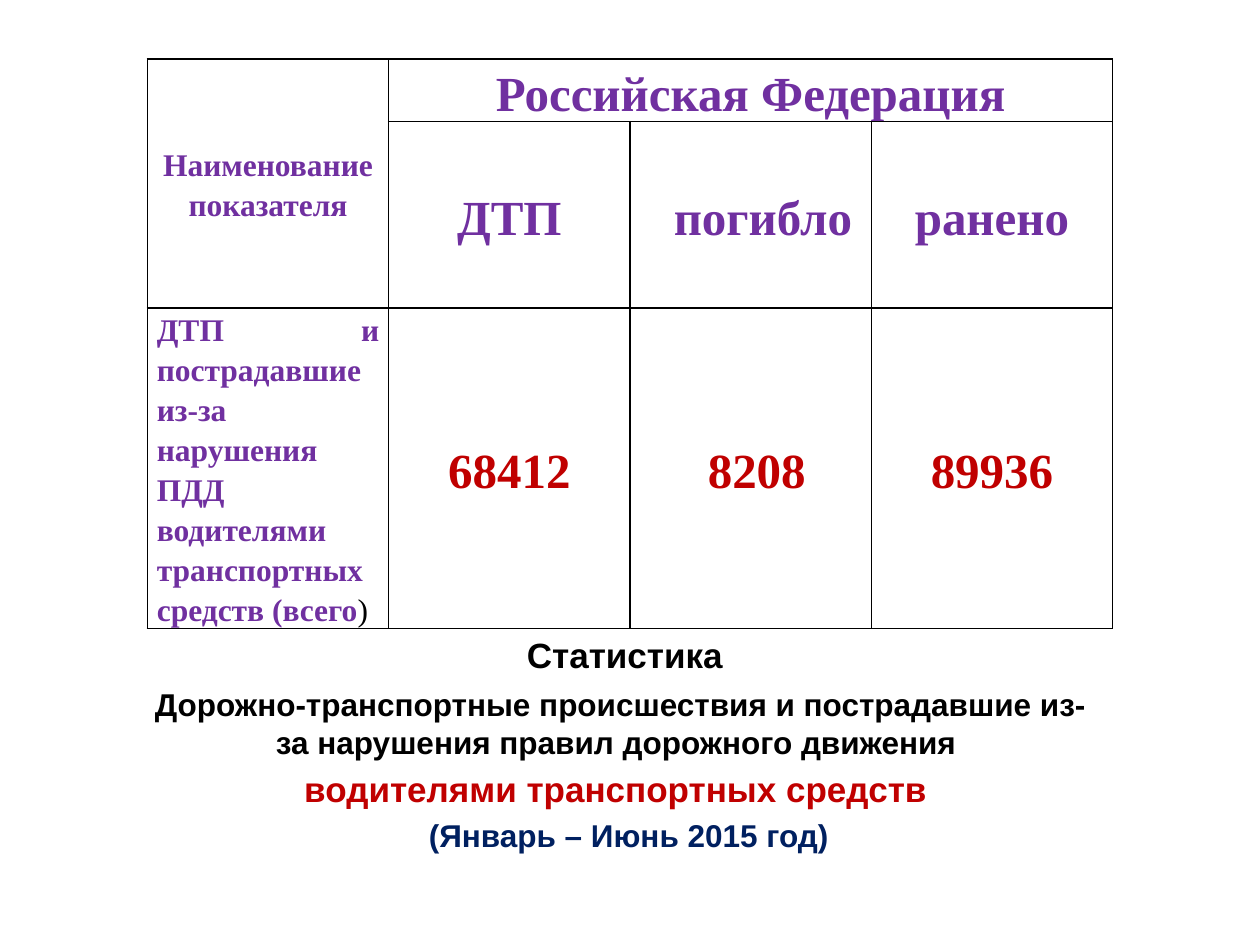
"""Build a slide with a table of road accident statistics and its caption."""
import pptx
import pptx.dml.color
import pptx.enum.text
import pptx.oxml
import pptx.oxml.ns
import pptx.util

Pt = pptx.util.Pt
RGBColor = pptx.dml.color.RGBColor
ALIGN = pptx.enum.text.PP_ALIGN
ANCHOR = pptx.enum.text.MSO_ANCHOR

BLACK = RGBColor(0x00, 0x00, 0x00)
WHITE = RGBColor(0xFF, 0xFF, 0xFF)
PURPLE = RGBColor(0x70, 0x30, 0xA0)
RED = RGBColor(0xC0, 0x00, 0x00)
NAVY = RGBColor(0x00, 0x20, 0x60)

HEADING = "Статистика"
INDICATOR = "Наименование показателя"
COUNTRY = "Российская Федерация"
MEASURES = [("ДТП", "68412", 0, 0), ("погибло", "8208", 14, 7), ("ранено", "89936", 0, 0)]
ROW_LABEL = "ДТП и пострадавшие из-за нарушения ПДД водителями транспортных средств (всего"
CAPTION = [
    ("Дорожно-транспортные происшествия и пострадавшие из-за нарушения правил "
     "дорожного движения ", dict(size=18)),
    ("водителями транспортных средств ", dict(size=20, color=RED, before=4)),
    ("(Январь – Июнь 2015 год)",
     dict(size=18, color=NAVY, before=3.6, align=ALIGN.LEFT, indent=164.5)),
]

TABLE_LEFT, TABLE_TOP = 84.24, 33.84
COLUMN_WIDTH = 137.88
ROW_HEIGHTS = [30.96, 99.36, 173.52]
MEASURE_MARGIN = 35.45


def write(paragraph, text, size=28, color=BLACK, font="Arial", bold=True,
          align=ALIGN.CENTER, before=0, spacing=None, indent=0):
    """Add a formatted run to a paragraph."""
    paragraph.alignment = align
    paragraph.space_before = Pt(before)
    if spacing:
        paragraph.line_spacing = spacing
    if indent:
        paragraph._p.get_or_add_pPr().set("marL", str(Pt(indent)))
    run = paragraph.add_run()
    run.text = text
    run.font.size, run.font.name, run.font.bold = Pt(size), font, bold
    run.font.color.rgb = color


def write_cell(cell, text, **style):
    """Write text into a table cell."""
    style = dict(dict(color=PURPLE, font="Times New Roman", spacing=1.15), **style)
    write(cell.text_frame.paragraphs[0], text, **style)


def dress_cell(cell):
    """Give a cell its margins, borders and fill."""
    cell.margin_left = cell.margin_right = Pt(5.4)
    cell.margin_top = cell.margin_bottom = 0
    cell.vertical_anchor = ANCHOR.MIDDLE
    properties = cell._tc.get_or_add_tcPr()
    for side in "LRTB":
        properties.append(pptx.oxml.parse_xml(
            f'<a:ln{side} {pptx.oxml.ns.nsdecls("a")} w="{Pt(1)}">'
            f'<a:solidFill><a:srgbClr val="{BLACK}"/></a:solidFill></a:ln{side}>'))
    cell.fill.solid()
    cell.fill.fore_color.rgb = WHITE


def add_frame(slide, left, top, width, height, anchor):
    """Add a wrapping text box and return its text frame."""
    frame = slide.shapes.add_textbox(Pt(left), Pt(top), Pt(width), Pt(height)).text_frame
    frame.word_wrap = True
    frame.vertical_anchor = anchor
    return frame


def add_statistics(slide):
    """Add the table of accidents, deaths and injuries."""
    column_count = len(MEASURES) + 1
    frame = slide.shapes.add_table(
        len(ROW_HEIGHTS), column_count, Pt(TABLE_LEFT), Pt(TABLE_TOP),
        Pt(COLUMN_WIDTH * column_count), Pt(sum(ROW_HEIGHTS)))
    table = frame.table
    table.first_row = table.horz_banding = False
    for column in table.columns:
        column.width = Pt(COLUMN_WIDTH)
    for row, height in zip(table.rows, ROW_HEIGHTS):
        row.height = Pt(height)
    for cell in table.iter_cells():
        dress_cell(cell)
    table.cell(0, 0).merge(table.cell(1, 0))
    table.cell(0, 1).merge(table.cell(0, column_count - 1))

    write_cell(table.cell(0, 0), INDICATOR, size=18)
    write_cell(table.cell(0, 1), COUNTRY)
    for column, (measure, count, measure_indent, count_indent) in enumerate(MEASURES, 1):
        measure_cell = table.cell(1, column)
        measure_cell.margin_top = measure_cell.margin_bottom = Pt(MEASURE_MARGIN)
        write_cell(measure_cell, measure, indent=measure_indent)
        write_cell(table.cell(2, column), count, color=RED, indent=count_indent)
    label = table.cell(2, 0)
    label.vertical_anchor = ANCHOR.TOP
    write_cell(label, ROW_LABEL, size=18, align=ALIGN.JUSTIFY)
    write_cell(label, ")", size=18, align=ALIGN.JUSTIFY, color=BLACK, bold=False)


def main():
    """Assemble and save the slide."""
    deck = pptx.Presentation()
    deck.slide_width, deck.slide_height = Pt(720), Pt(540)
    slide = deck.slides.add_slide(deck.slide_layouts[6])
    add_statistics(slide)
    heading = add_frame(slide, 141.12, 354.24, 432, 39.6, ANCHOR.MIDDLE)
    write(heading.paragraphs[0], HEADING, size=20)
    caption = add_frame(slide, 73.44, 388.08, 562.32, 112.32, ANCHOR.TOP)
    for index, (line, style) in enumerate(CAPTION):
        write(caption.add_paragraph() if index else caption.paragraphs[0], line, **style)
    deck.save("out.pptx")


if __name__ == "__main__":
    main()
